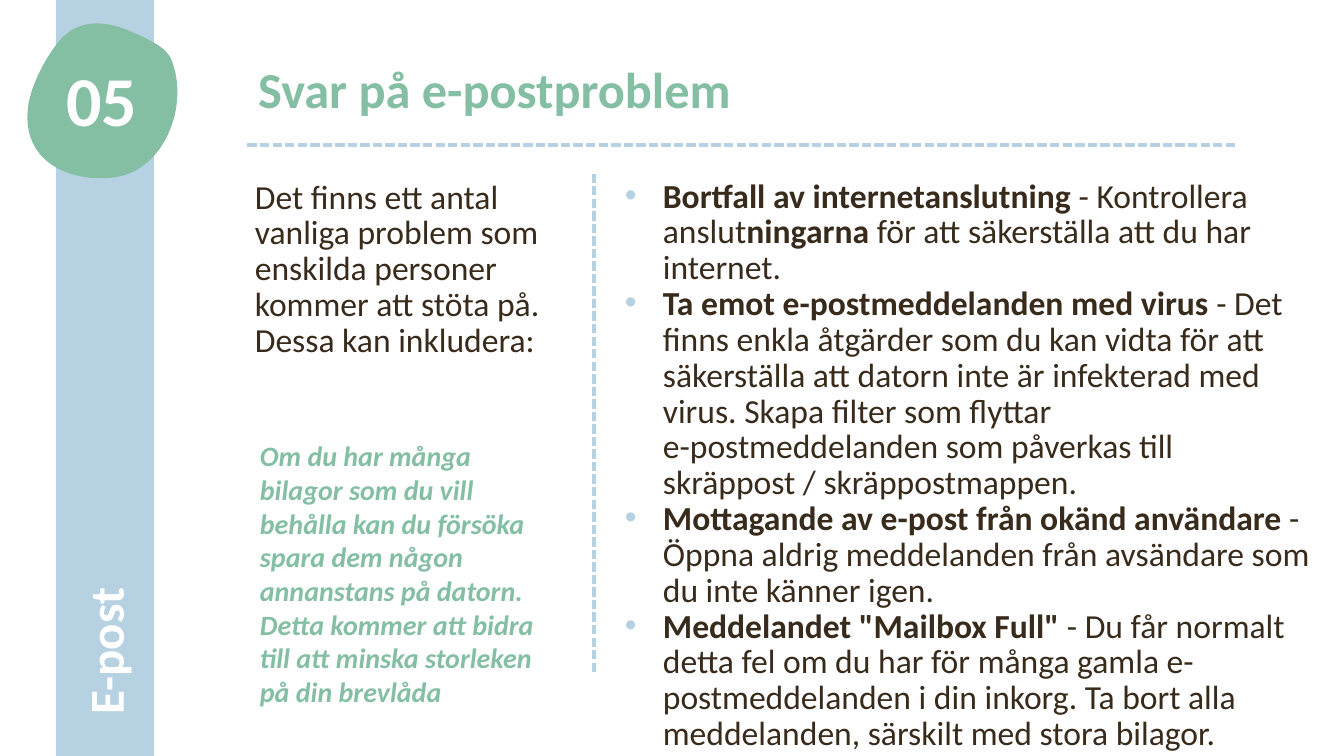
from lxml.etree import SubElement
from pptx import Presentation
from pptx.dml.color import RGBColor
from pptx.enum.dml import MSO_LINE
from pptx.enum.shapes import MSO_CONNECTOR, MSO_SHAPE
from pptx.enum.text import MSO_ANCHOR as ANCHOR, MSO_AUTO_SIZE, PP_ALIGN as ALIGN
from pptx.oxml.ns import qn
from pptx.util import Pt

PX = 914400 / 100.8
COLORS = {name: RGBColor.from_string(value) for name, value in {
    "blue": "B6D1E1", "green": "84BFA4", "brown": "382B1B", "white": "FFFFFF"}.items()}


def px(*lengths):
    return [round(length * PX) for length in lengths]


def write_text(shape, box, paragraphs, size, color, bold=False, italic=False, spacing=None,
               align=ALIGN.LEFT, anchor=ANCHOR.TOP, margin=0, bullet=False):
    """Each paragraph is a list of runs; bold runs alternate with plain ones in a bullet list."""
    shape.left, shape.top, shape.width, shape.height = px(*box)
    frame = shape.text_frame
    frame.word_wrap, frame.auto_size, frame.vertical_anchor = True, MSO_AUTO_SIZE.NONE, anchor
    for index, runs in enumerate(paragraphs):
        paragraph = frame.add_paragraph() if index else frame.paragraphs[0]
        paragraph.alignment = align
        paragraph.space_before = Pt(0)
        if spacing:
            paragraph.line_spacing = spacing
        properties = paragraph._p.get_or_add_pPr()
        properties.set("marL", str(px(margin)[0]))
        properties.set("indent", str(px(-38 if bullet else 0)[0]))
        if bullet:
            bullet_color = SubElement(properties, qn("a:buClr"))
            SubElement(bullet_color, qn("a:srgbClr"), val=str(COLORS["blue"]))
            SubElement(properties, qn("a:buFont"), typeface="Arial")
            SubElement(properties, qn("a:buChar"), char="•")
        for position, text in enumerate(runs):
            for line, part in enumerate(text.split("\n")):
                if line:
                    paragraph.add_line_break()
                run = paragraph.add_run()
                run.text = part
                font = run.font
                font.name, font.size, font.color.rgb = "Calibri", Pt(size), COLORS[color]
                font.bold = position % 2 == 0 if bullet else bold
                font.italic = italic


presentation = Presentation()
presentation.slide_width, presentation.slide_height = px(1344, 756)
slide = presentation.slides.add_slide(presentation.slide_layouts[5])
shapes = slide.shapes

# Side band
band = shapes.add_shape(MSO_SHAPE.RECTANGLE, *px(56, 0, 98, 756))

# Rounded blob behind the number, traced along cubic curves
blob_start = (119, 27)
blob_curves = [
    ((99, 21), (78, 21), (61, 39)),
    ((46, 56), (31, 85), (28, 107)),
    ((21, 161), (69, 184), (117, 177)),
    ((164, 169), (188, 108), (173, 64)),
    ((169, 50), (157, 44), (145, 38)),
    ((137, 34), (128, 30), (119, 27)),
]
STEPS = 16
outline = []
current = blob_start
for first, second, end in blob_curves:
    for step in range(1, STEPS + 1):
        t = step / STEPS
        weights = ((1 - t) ** 3, 3 * t * (1 - t) ** 2, 3 * t * t * (1 - t), t ** 3)
        corners = (current, first, second, end)
        outline.append(px(*(sum(w * c[axis] for w, c in zip(weights, corners))
                            for axis in (0, 1))))
    current = end
builder = shapes.build_freeform(*px(*blob_start))
builder.add_line_segments(outline, close=True)
blob = builder.convert_to_shape()

for shape, color in ((band, "blue"), (blob, "green")):
    shape.shadow.inherit = False
    shape.fill.solid()
    shape.fill.fore_color.rgb = COLORS[color]
    shape.line.fill.background()

# Dashed dividers
for ends in ((1235, 145, 245, 145), (594, 672, 594, 172)):
    divider = shapes.add_connector(MSO_CONNECTOR.STRAIGHT, *px(*ends))
    divider.line.color.rgb = COLORS["blue"]
    divider.line.width = Pt(2.25)
    divider.line.dash_style = MSO_LINE.SQUARE_DOT
    SubElement(divider._element.spPr, qn("a:effectLst"))

# Title
write_text(shapes.title, (246, 75, 954, 51), [["Svar på e-postproblem"]], 36, "green",
           bold=True, spacing=Pt(25.6), anchor=ANCHOR.MIDDLE, margin=2)

# Section name and number
section = shapes.add_textbox(0, 0, 0, 0)
write_text(section, (-318, 265, 847, 72), [["E-post"]], 35, "white",
           bold=True, spacing=Pt(40.2), anchor=ANCHOR.MIDDLE)
section.rotation = 270
write_text(shapes.add_textbox(0, 0, 0, 0), (17, 61, 170, 95), [["05"]], 50, "white",
           bold=True, spacing=0.9, align=ALIGN.CENTER)

# Introduction and tip
write_text(shapes.add_textbox(0, 0, 0, 0), (243, 175, 326, 451),
           [["Det finns ett antal vanliga problem som enskilda personer kommer att stöta på. "
             "Dessa kan inkludera:"]],
           24, "brown", spacing=Pt(25.6), margin=2)
write_text(shapes.add_textbox(0, 0, 0, 0), (250, 434, 306, 248),
           [["Om du har många bilagor som du vill behålla kan du försöka spara dem någon "
             "annanstans på datorn. Detta kommer att bidra till att minska storleken på din "
             "brevlåda"]],
           20, "green", bold=True, italic=True)

# Problems and answers
problems = [
    ["Bortfall av internetanslutning ", "- Kontrollera anslut", "ningarna ",
     "för att säkerställa att du har internet."],
    ["Ta emot e-postmeddelanden med virus ",
     "- Det finns enkla åtgärder som du kan vidta för att säkerställa att datorn inte är "
     "infekterad med virus. Skapa filter som flyttar \n"
     "e-postmeddelanden som påverkas till skräppost / skräppostmappen."],
    ["Mottagande av e-post från okänd användare ",
     "- Öppna aldrig meddelanden från avsändare som du inte känner igen."],
    ["Meddelandet \"Mailbox Full\" ",
     "- Du får normalt detta fel om du har för många gamla e-postmeddelanden i din inkorg. "
     "Ta bort alla meddelanden, särskilt med stora bilagor."],
]
write_text(shapes.add_textbox(0, 0, 0, 0), (614, 174, 706, 451), problems, 24, "brown",
           spacing=Pt(25.6), margin=39, bullet=True)

presentation.save("out.pptx")
